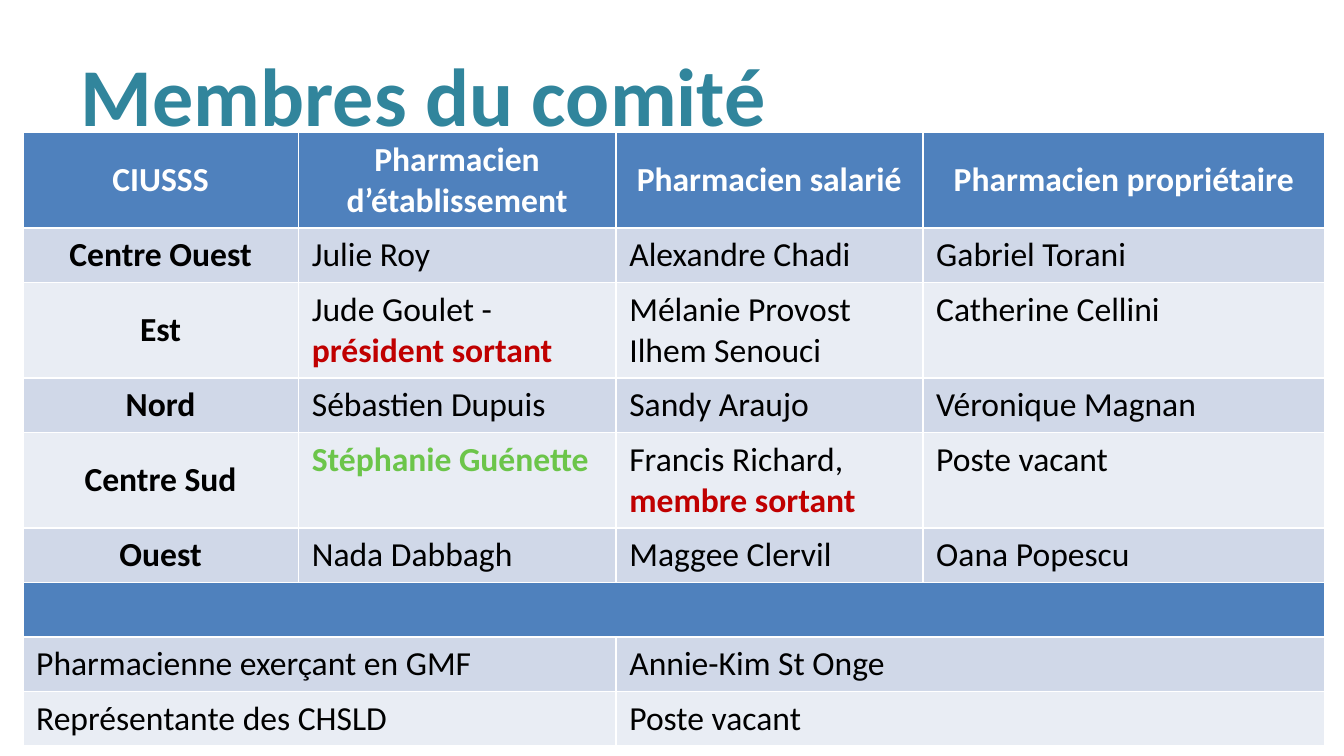
from pptx import Presentation
from pptx.dml.color import RGBColor
from pptx.enum.text import MSO_ANCHOR as Anchor, PP_ALIGN as Align
from pptx.util import Cm, Pt

BLUE, BAND_DARK, BAND_LIGHT = "4F81BD", "D0D8E8", "E9EDF4"
WHITE, BLACK, RED, GREEN, TEAL = "FFFFFF", "000000", "C00000", "6CC54A", "31859C"


def rgb(hex_code):
    return RGBColor.from_string(hex_code)


def write(frame, text, size=18, color=BLACK, bold=False, align=Align.LEFT,
          anchor=Anchor.TOP):
    """Text is a string (one paragraph per line) or a list of (text, color, bold)."""
    frame.vertical_anchor = anchor
    if isinstance(text, str):
        lines = [[(line, color, bold)] for line in text.split("\n")]
    else:
        lines = [text]
    for i, parts in enumerate(lines):
        paragraph = frame.add_paragraph() if i else frame.paragraphs[0]
        paragraph.alignment = align
        for words, run_color, run_bold in parts:
            run = paragraph.add_run()
            run.text = words
            run.font.name = "Calibri"
            run.font.size = Pt(size)
            run.font.bold = run_bold
            run.font.color.rgb = rgb(run_color)


prs = Presentation()
prs.slide_width, prs.slide_height = Cm(25.4), Cm(14.28)
slide = prs.slides.add_slide(prs.slide_layouts[5])

# Title
title = slide.shapes.title
title.left, title.top, title.width, title.height = Cm(1.27), Cm(0.58), Cm(22.86), Cm(2.39)
write(title.text_frame, "Membres du comité", size=44, color=TEAL, bold=True,
      anchor=Anchor.MIDDLE)

# Members by region, then an empty band and the other representatives
members = [
    ["CIUSSS", "Pharmacien d’établissement", "Pharmacien salarié",
     "Pharmacien propriétaire"],
    ["Centre Ouest", "Julie Roy", "Alexandre Chadi", "Gabriel Torani"],
    ["Est", [("Jude Goulet - ", BLACK, False), ("président sortant", RED, True)],
     "Mélanie Provost\nIlhem Senouci", "Catherine Cellini"],
    ["Nord", "Sébastien Dupuis", "Sandy Araujo", "Véronique Magnan"],
    ["Centre Sud", [("Stéphanie Guénette", GREEN, True)],
     [("Francis Richard, ", BLACK, False), ("membre sortant", RED, True)],
     "Poste vacant"],
    ["Ouest", "Nada Dabbagh", "Maggee Clervil", "Oana Popescu"],
    ["", "", "", ""],
    ["Pharmacienne exerçant en GMF", "", "Annie-Kim St Onge", ""],
    ["Représentante des CHSLD", "", "Poste vacant", ""],
]
BAND_ROW = 6
column_widths = [5.21, 6, 5.8, 7.6]
row_heights = [1.8, 1.03, 1.66, 1.03, 1.66] + [1.03] * 4

table = slide.shapes.add_table(len(members), 4, Cm(0.43), Cm(2.5),
                               Cm(sum(column_widths)), Cm(sum(row_heights))).table
for column, width in zip(table.columns, column_widths):
    column.width = Cm(width)
for row, height in zip(table.rows, row_heights):
    row.height = Cm(height)

# Merged cells
table.cell(BAND_ROW, 0).merge(table.cell(BAND_ROW, 3))
for r in range(BAND_ROW + 1, len(members)):
    for c in (0, 2):
        table.cell(r, c).merge(table.cell(r, c + 1))

# Fills and text
for r, entries in enumerate(members):
    is_header = r == 0
    if r in (0, BAND_ROW):
        fill = BLUE
    else:
        fill = BAND_DARK if r % 2 else BAND_LIGHT
    for c, entry in enumerate(entries):
        cell = table.cell(r, c)
        cell.fill.solid()
        cell.fill.fore_color.rgb = rgb(fill)
        if not entry:
            continue
        is_label = is_header or (c == 0 and r < BAND_ROW)
        cell.vertical_anchor = Anchor.MIDDLE if is_label else Anchor.TOP
        write(cell.text_frame, entry, color=WHITE if is_header else BLACK, bold=is_label,
              align=Align.CENTER if is_label else Align.LEFT,
              anchor=None)

prs.save("out.pptx")
